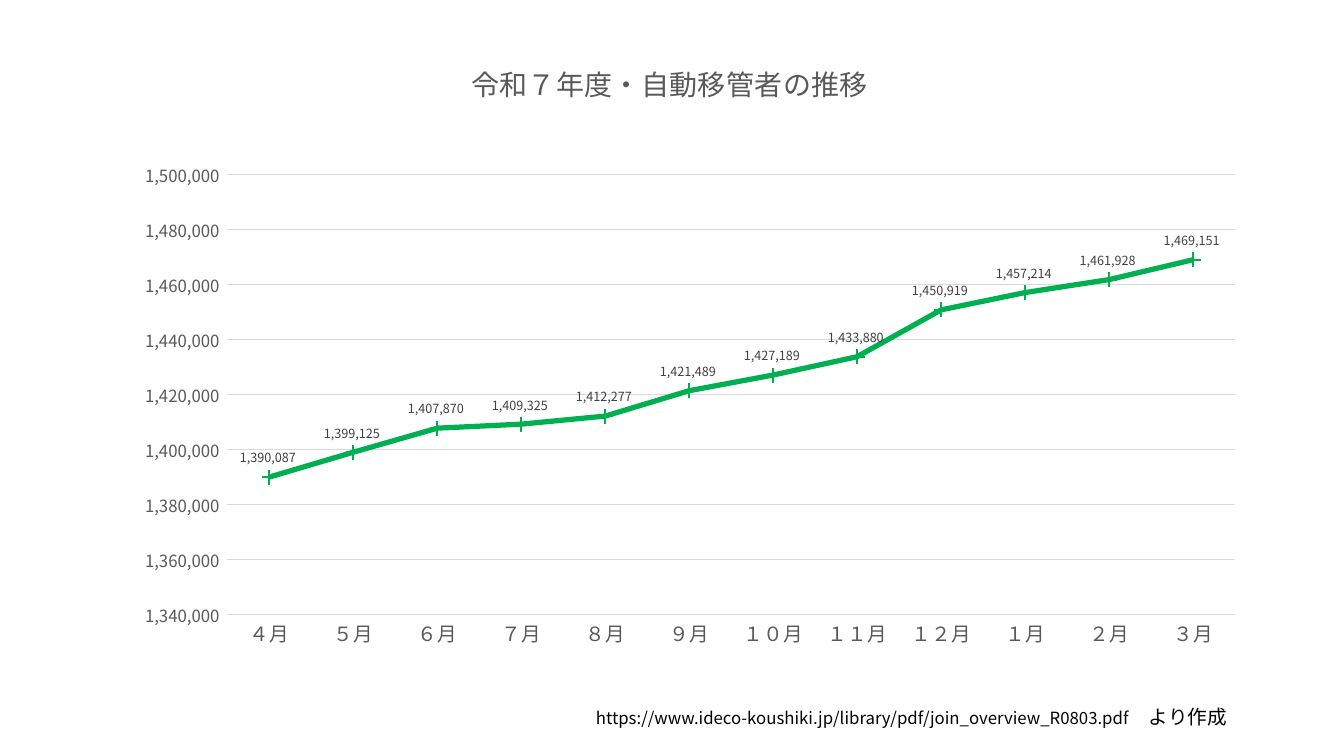
from lxml import etree
from pptx import Presentation
from pptx.chart.data import CategoryChartData
from pptx.dml.color import RGBColor
from pptx.enum.chart import XL_CHART_TYPE as ChartType
from pptx.enum.chart import XL_LABEL_POSITION as LabelPosition
from pptx.enum.chart import XL_MARKER_STYLE as MarkerStyle
from pptx.enum.chart import XL_TICK_MARK as TickMark
from pptx.enum.text import MSO_AUTO_SIZE as AutoSize
from pptx.oxml.ns import qn
from pptx.util import Pt

TITLE = "令和７年度・自動移管者の推移"
MONTHLY = [
    ("４月", 1390087), ("５月", 1399125), ("６月", 1407870),
    ("７月", 1409325), ("８月", 1412277), ("９月", 1421489),
    ("１０月", 1427189), ("１１月", 1433880), ("１２月", 1450919),
    ("１月", 1457214), ("２月", 1461928), ("３月", 1469151),
]
CREDIT = [
    ("https://www.ideco-koushiki.jp/library/pdf/join_overview_R0803.pdf", 12),
    ("　より作成", 14),
]
COUNT_FORMAT = r"#,##0_);[Red]\(#,##0\)"
FONT = "Noto Sans CJK JP"

BLACK = RGBColor(0x00, 0x00, 0x00)
GREY = RGBColor(0x59, 0x59, 0x59)
DARK_GREY = RGBColor(0x40, 0x40, 0x40)
PALE_GREY = RGBColor(0xD9, 0xD9, 0xD9)
GREEN = RGBColor(0x00, 0xB0, 0x50)

PX = 914400 / 100.8
CHART_BOX = (62, 27, 1207, 682)
CREDIT_BOX = (586, 700, 758, 82)


def emu(*lengths):
    return [round(length * PX) for length in lengths]


def style(font, size, color):
    font.name, font.size, font.bold = FONT, Pt(size), False
    font.color.rgb = color


def add_text(paragraph, text, *, size, color):
    run = paragraph.add_run()
    run.text = text
    style(run.font, size, color)


def add_east_asian(root):
    for latin in list(root.iter(qn("a:latin"))):
        east_asian = etree.Element(qn("a:ea"))
        east_asian.set("typeface", FONT)
        latin.addnext(east_asian)


def place(parent, index, **settings):
    for old in parent.findall(qn("c:layout")):
        parent.remove(old)
    layout = etree.Element(qn("c:layout"))
    parent.insert(index, layout)
    manual = etree.SubElement(layout, qn("c:manualLayout"))
    for name, value in settings.items():
        etree.SubElement(manual, qn(f"c:{name}")).set("val", str(value))


def draw_line(line, color, width):
    line.color.rgb = color
    line.width = Pt(width)


def add_trend(slide):
    counts = CategoryChartData(number_format=COUNT_FORMAT)
    counts.categories = [month for month, _ in MONTHLY]
    counts.add_series("自動移管者", [count for _, count in MONTHLY])
    chart = slide.shapes.add_chart(
        ChartType.LINE_MARKERS, *emu(*CHART_BOX), counts).chart
    style(chart.font, 10, BLACK)
    chart.has_legend = False

    chart.has_title = True
    title = chart.chart_title
    add_text(title.text_frame.paragraphs[0], TITLE, size=20, color=GREY)
    place(title._element, 1, xMode="edge", yMode="edge", x=0.335, y=0.04)
    place(chart._chartSpace.find(f".//{qn('c:plotArea')}"), 0,
          layoutTarget="inner", xMode="edge", yMode="edge",
          x=0.137, y=0.217, w=0.835, h=0.645)

    months, scale = chart.category_axis, chart.value_axis
    for axis, size in ((months, 14), (scale, 12)):
        axis.major_tick_mark = axis.minor_tick_mark = TickMark.NONE
        style(axis.tick_labels.font, size, GREY)
    draw_line(months.format.line, PALE_GREY, 0.75)
    scale.format.line.fill.background()
    scale.minimum_scale, scale.maximum_scale = 1340000, 1500000
    scale.major_unit = 20000
    scale.has_major_gridlines = True
    draw_line(scale.major_gridlines.format.line, PALE_GREY, 0.75)
    scale.tick_labels.number_format = COUNT_FORMAT
    scale.tick_labels.number_format_is_linked = False

    plot = chart.plots[0]
    plot.vary_by_categories = False
    trend = plot.series[0]
    trend.smooth = False
    draw_line(trend.format.line, GREEN, 3.75)
    trend.marker.style, trend.marker.size = MarkerStyle.PLUS, 10
    trend.marker.format.fill.solid()
    trend.marker.format.fill.fore_color.rgb = GREEN
    draw_line(trend.marker.format.line, GREEN, 0.75)

    labels = trend.data_labels
    labels.show_value = True
    labels.position = LabelPosition.ABOVE
    labels.number_format = COUNT_FORMAT
    labels.number_format_is_linked = False
    style(labels.font, 9, DARK_GREY)
    add_east_asian(chart._chartSpace)


def add_credit(slide):
    credit = slide.shapes.add_textbox(*emu(*CREDIT_BOX))
    frame = credit.text_frame
    frame.word_wrap = True
    frame.auto_size = AutoSize.SHAPE_TO_FIT_TEXT
    for text, size in CREDIT:
        add_text(frame.paragraphs[0], text, size=size, color=BLACK)
    add_east_asian(credit._element)


def main():
    deck = Presentation()
    deck.slide_width, deck.slide_height = emu(1344, 756)
    slide = deck.slides.add_slide(deck.slide_layouts[6])
    add_trend(slide)
    add_credit(slide)
    deck.save("out.pptx")


if __name__ == "__main__":
    main()
